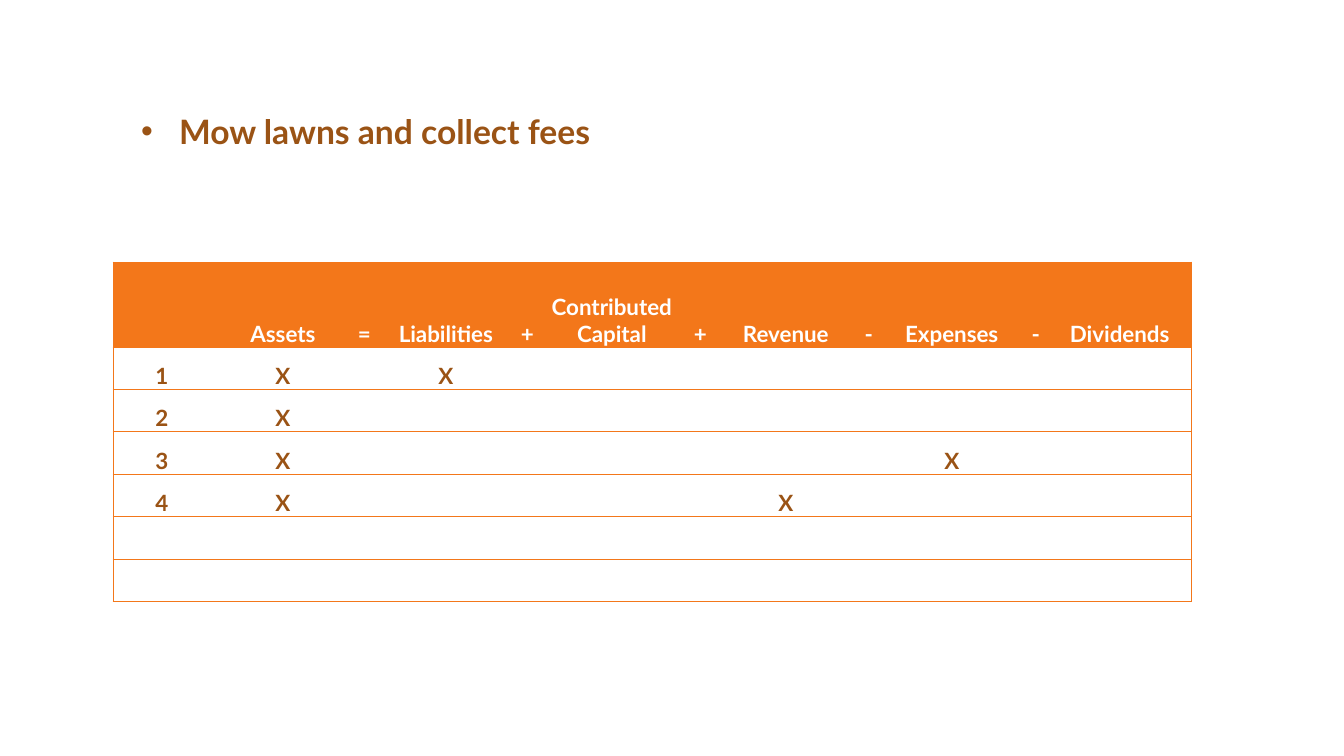
"""Build the accounting equation slide with its transaction table."""
from lxml import etree
from pptx import Presentation
from pptx.dml.color import RGBColor
from pptx.enum.text import MSO_ANCHOR, PP_ALIGN
from pptx.oxml.ns import qn
from pptx.util import Pt

BULLET = "Mow lawns and collect fees"
HEADERS = ["", "Assets", "=", "Liabilities", "+", "Contributed Capital", "+",
           "Revenue", "-", "Expenses", "-", "Dividends"]
TRANSACTIONS = [
    ("1", ("Assets", "Liabilities")),
    ("2", ("Assets",)),
    ("3", ("Assets", "Expenses")),
    ("4", ("Assets", "Revenue")),
    ("", ()),
    ("", ()),
]

SLIDE_SIZE = (1344, 756)
BODY_BOX = (131, 106, 1109, 585)
BULLET_INDENT = 38
TABLE_CORNER = (113, 262)
COLUMN_WIDTHS = [98, 144, 19, 144, 19, 150, 27, 144, 22, 144, 24, 144]
ROW_HEIGHTS = [85, 42, 42, 43, 42, 43, 42]
CELL_INSET = 1

FONT = "Lato"
ORANGE = RGBColor(0xF3, 0x77, 0x1A)
BROWN = RGBColor(0x9A, 0x53, 0x15)
WHITE = RGBColor(0xFF, 0xFF, 0xFF)
BORDER_WIDTH = Pt(0.5)
CENTER = PP_ALIGN.CENTER
BOTTOM = MSO_ANCHOR.BOTTOM


def px(length):
    """Turn a length in px into EMU."""
    return round(length * 914400 / 100.8)


def add_text(para, text, size, color):
    """Add one bold run to a paragraph."""
    span = para.add_run()
    span.text = text
    span.font.name = FONT
    span.font.size = Pt(size)
    span.font.bold = True
    span.font.color.rgb = color


def add_border(cell, side, visible):
    """Draw or clear one side of a cell."""
    properties = cell._tc.get_or_add_tcPr()
    line = etree.SubElement(properties, qn(f"a:ln{side}"), w=str(BORDER_WIDTH))
    if visible:
        fill = etree.SubElement(line, qn("a:solidFill"))
        etree.SubElement(fill, qn("a:srgbClr"), val=str(ORANGE))
    else:
        etree.SubElement(line, qn("a:noFill"))


def format_body(body):
    """Place the body placeholder and write its bullet."""
    body.left, body.top, body.width, body.height = map(px, BODY_BOX)
    para = body.text_frame.paragraphs[0]
    properties = para._p.get_or_add_pPr()
    properties.set("marL", str(px(BULLET_INDENT)))
    properties.set("indent", str(-px(BULLET_INDENT)))
    etree.SubElement(properties, qn("a:buFont"), typeface="Arial")
    etree.SubElement(properties, qn("a:buChar"), char="•")
    para.space_before = Pt(0)
    add_text(para, BULLET, 24, BROWN)


def format_cell(cell, text, is_header, is_first, is_last):
    """Give a cell its borders, fill and text."""
    for side, visible in (("L", is_first), ("R", is_last), ("T", True), ("B", True)):
        add_border(cell, side, visible)
    if is_header:
        cell.fill.solid()
        cell.fill.fore_color.rgb = ORANGE
    else:
        cell.fill.background()
    cell.margin_left = cell.margin_right = cell.margin_top = px(CELL_INSET)
    cell.margin_bottom = 0
    cell.vertical_anchor = BOTTOM
    para = cell.text_frame.paragraphs[0]
    para.alignment = CENTER
    if text:
        add_text(para, text, 16, WHITE if is_header else BROWN)


def add_transactions(page):
    """Add the table of accounts touched by each transaction."""
    rows = [HEADERS]
    for number, accounts in TRANSACTIONS:
        rows.append([number] + ["X" if name in accounts else "" for name in HEADERS[1:]])
    left, top = TABLE_CORNER
    frame = page.shapes.add_table(
        len(rows), len(HEADERS), px(left), px(top),
        px(sum(COLUMN_WIDTHS)), px(sum(ROW_HEIGHTS)))
    table = frame.table
    table.horz_banding = False
    for column, width in zip(table.columns, COLUMN_WIDTHS):
        column.width = px(width)
    for row, height in zip(table.rows, ROW_HEIGHTS):
        row.height = px(height)
    last = len(HEADERS) - 1
    for r, texts in enumerate(rows):
        for c, text in enumerate(texts):
            format_cell(table.cell(r, c), text, r == 0, c == 0, c == last)


def main():
    """Build and save the deck."""
    deck = Presentation()
    deck.slide_width, deck.slide_height = map(px, SLIDE_SIZE)
    page = deck.slides.add_slide(deck.slide_layouts[1])
    title = page.shapes.title
    title.element.getparent().remove(title.element)
    format_body(page.placeholders[1])
    add_transactions(page)
    deck.save("out.pptx")


if __name__ == "__main__":
    main()
